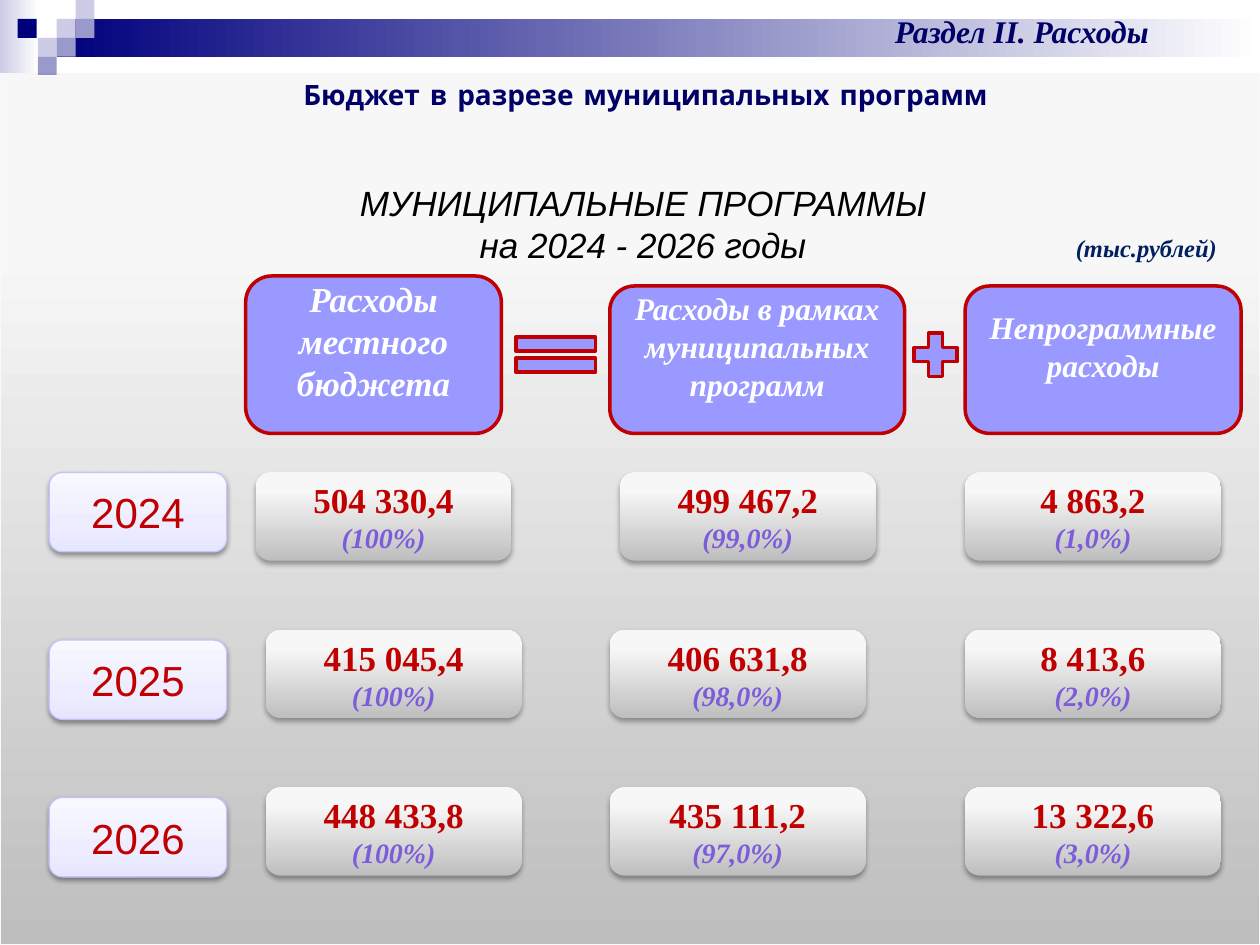
"""Build the slide on the budget split by municipal programmes, 2024-2026."""
import pptx
import pptx.dml.color
import pptx.enum.shapes
import pptx.enum.text
import pptx.oxml
import pptx.oxml.ns
import pptx.util
from pptx.util import Inches

SHAPE = pptx.enum.shapes.MSO_SHAPE
ANCHOR = pptx.enum.text.MSO_ANCHOR
ALIGN = pptx.enum.text.PP_ALIGN

COLORS = {
    "navy": "00007D", "pale": "CCCCE6", "mid": "9999CC", "white": "FFFFFF",
    "head": "9999FF", "red": "C00000", "violet": "7D5CDA", "black": "000000",
    "unit": "002060", "title": "000066", "edge": "F9F9F9", "year_edge": "C4C4FB",
    "grey": "BEBEBE", "light": "F7F7F7", "lighter": "F8F8F8",
    "year_low": "E6E6FF", "year_mid": "EDEDFF", "year_top": "F8F8FF",
}
GREY = ([(0, "grey"), (80, "light"), (100, "lighter")], 90)
LILAC = ([(0, "year_low"), (35, "year_mid"), (100, "year_top")], 90)
SERIF = "Times New Roman"
FORMATS = {
    "year": dict(name="Arial", size=24, color="red"),
    "amount": dict(name=SERIF, size=20, color="red", bold=True),
    "share": dict(name=SERIF, size=16, color="violet", bold=True, italic=True),
    "head": dict(name=SERIF, size=18, color="white", bold=True, italic=True),
    "head_big": dict(name=SERIF, size=20, color="white", bold=True, italic=True),
    "programme": dict(name="Arial", size=20, color="black", italic=True),
    "unit": dict(name=SERIF, size=14, color="unit", bold=True, italic=True),
    "section": dict(name=SERIF, size=18, color="title", bold=True, italic=True),
    "title": dict(name="Comic Neue", size=16, color="title", bold=True),
}

BANDS = [((0, 0, 0.31, 0.58), "pale"), ((0.45, 0.15, 9.55, 0.3), "navy")]
SQUARES = [
    (0.45, 0.15, "pale"), (0.6, 0, "pale"), (0.6, 0.15, "mid"), (0.3, 0.3, "pale"),
    (0.14, 0.15, "navy"), (0.45, 0.3, "mid"), (0.3, 0.45, "mid"),
]
HEADS = [
    ("Непрограммные расходы", (7.66, 2.27, 2.19, 1.17), "head"),
    ("Расходы в рамках муниципальных программ", (4.84, 2.27, 2.34, 1.17), "head"),
    ("Расходы местного бюджета", (1.95, 2.19, 2.03, 1.25), "head_big"),
]
SIGNS = [(SHAPE.MATH_EQUAL, (3.98, 2.58, 0.86, 0.47)),
         (SHAPE.MATH_PLUS, (7.19, 2.58, 0.47, 0.47))]
YEARS = [
    ("2024", 3.75, (2.03, 4.92, 7.66),
     [("504 330,4", "(100%)"), ("499 467,2", "(99,0%)"), ("4 863,2", "(1,0%)")]),
    ("2025", 5.08, (2.11, 4.84, 7.66),
     [("415 045,4", "(100%)"), ("406 631,8", "(98,0%)"), ("8 413,6", "(2,0%)")]),
    ("2026", 6.33, (2.11, 4.84, 7.66),
     [("448 433,8", "(100%)"), ("435 111,2", "(97,0%)"), ("13 322,6", "(3,0%)")]),
]
VALUE_TOP, VALUE_STEP = 3.75, 1.25
TEXTS = [
    ((0.84, 1.39, 8.53, 0.76), ["МУНИЦИПАЛЬНЫЕ ПРОГРАММЫ", "на 2024 - 2026 годы"],
     "programme", ALIGN.CENTER, True),
    ((8.44, 1.8, 1.33, 0.34), ["(тыс.рублей)"], "unit", ALIGN.LEFT, False),
    ((6.26, 0.05, 3.7, 0.4), ["Раздел II. Расходы"], "section", ALIGN.CENTER, True),
    ((0.88, 0.57, 8.49, 0.37), ["Бюджет в разрезе муниципальных программ"],
     "title", ALIGN.CENTER, True),
]


def rgb(name):
    return pptx.dml.color.RGBColor.from_string(COLORS[name])


def add_child(parent, tag, **attrs):
    el = pptx.oxml.parse_xml(f"<a:{tag} {pptx.oxml.ns.nsdecls('a')}/>")
    for key, value in attrs.items():
        el.set(key, str(value))
    parent.append(el)
    return el


def paint_gradient(sp, stops, angle):
    sp.fill.gradient()
    sp.fill.gradient_angle = angle
    gs_list = sp._element.spPr.find(".//" + pptx.oxml.ns.qn("a:gsLst"))
    for gs in list(gs_list):
        gs_list.remove(gs)
    for pos, color in stops:
        add_child(add_child(gs_list, "gs", pos=pos * 1000), "srgbClr", val=COLORS[color])


def add_shadow(sp, alpha, distance):
    effects = sp._element.spPr.find(pptx.oxml.ns.qn("a:effectLst"))
    outer = add_child(effects, "outerShdw", blurRad=pptx.util.Pt(3.1),
                      dist=pptx.util.Pt(distance), dir=90 * 60000, rotWithShape=0)
    add_child(add_child(outer, "srgbClr", val=COLORS["black"]), "alpha", val=alpha * 1000)


def add_shape(slide, kind, box, fill, line=None, width=0.75, shadow=None):
    sp = slide.shapes.add_shape(kind, *map(Inches, box))
    sp.shadow.inherit = False
    if isinstance(fill, tuple):
        paint_gradient(sp, *fill)
    else:
        sp.fill.solid()
        sp.fill.fore_color.rgb = rgb(fill)
    if line:
        sp.line.color.rgb = rgb(line)
        sp.line.width = pptx.util.Pt(width)
    else:
        sp.line.fill.background()
    if shadow:
        add_shadow(sp, *shadow)
    return sp


def write(sp, lines, align=ALIGN.CENTER, anchor=ANCHOR.MIDDLE, wrap=True):
    tf = sp.text_frame
    tf.word_wrap = wrap
    tf.vertical_anchor = anchor
    for i, (text, style) in enumerate(lines):
        p = tf.add_paragraph() if i else tf.paragraphs[0]
        p.alignment = align
        r = p.add_run()
        r.text = text
        for key, value in FORMATS[style].items():
            if key == "color":
                r.font.color.rgb = rgb(value)
            else:
                setattr(r.font, key, pptx.util.Pt(value) if key == "size" else value)


def main():
    prs = pptx.Presentation()
    prs.slide_width, prs.slide_height = Inches(10), Inches(7.5)
    slide = prs.slides.add_slide(prs.slide_layouts[6])

    for box, color in BANDS:
        add_shape(slide, SHAPE.RECTANGLE, box, ([(0, color), (100, "white")], 0))
    for x, y, color in SQUARES:
        add_shape(slide, SHAPE.RECTANGLE, (x, y, 0.15, 0.15), color)
    add_shape(slide, SHAPE.FLOWCHART_PROCESS, (0, 0.6, 10, 6.9), GREY, "edge",
              shadow=(35, 1.8))

    for text, box, style in HEADS:
        sp = add_shape(slide, SHAPE.ROUNDED_RECTANGLE, box, "head", "red", 2)
        write(sp, [(text, style)])
        sp.text_frame.margin_bottom = Inches(0.27)
    for kind, box in SIGNS:
        add_shape(slide, kind, box, "head", "red", 2)

    for row, (year, year_top, lefts, values) in enumerate(YEARS):
        sp = add_shape(slide, SHAPE.ROUNDED_RECTANGLE, (0.39, year_top, 1.41, 0.63),
                       LILAC, "year_edge", shadow=(38, 1.6))
        write(sp, [(year, "year")])
        for x, (amount, share) in zip(lefts, values):
            box = (x, VALUE_TOP + row * VALUE_STEP, 2.03, 0.7)
            sp = add_shape(slide, SHAPE.ROUNDED_RECTANGLE, box, GREY, shadow=(35, 1.8))
            write(sp, [(amount, "amount"), (share, "share")])

    for box, lines, style, align, wrap in TEXTS:
        sp = slide.shapes.add_textbox(*map(Inches, box))
        write(sp, [(line, style) for line in lines], align, ANCHOR.TOP, wrap)

    prs.save("out.pptx")


if __name__ == "__main__":
    main()
